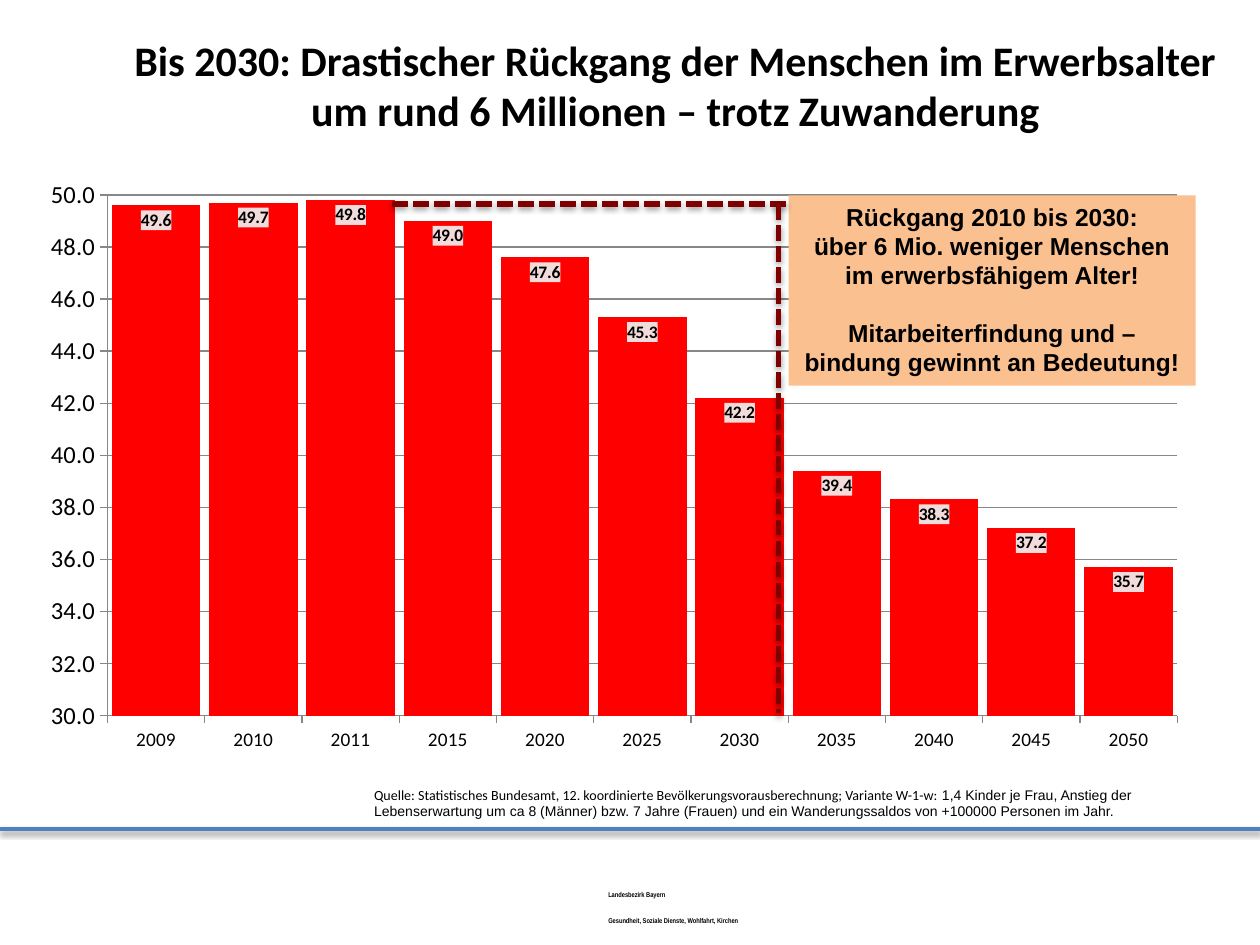
from lxml import etree
from pptx import Presentation
from pptx.chart.data import CategoryChartData
from pptx.dml.color import RGBColor
from pptx.enum.chart import XL_CHART_TYPE, XL_LABEL_POSITION, XL_TICK_MARK
from pptx.enum.dml import MSO_LINE
from pptx.enum.shapes import MSO_CONNECTOR, MSO_SHAPE
from pptx.enum.text import MSO_ANCHOR, PP_ALIGN
from pptx.oxml import parse_xml
from pptx.oxml.ns import nsdecls, qn
from pptx.util import Inches, Pt

COLUMN_CLUSTERED = XL_CHART_TYPE.COLUMN_CLUSTERED
INSIDE_END = XL_LABEL_POSITION.INSIDE_END
TICK_OUTSIDE = XL_TICK_MARK.OUTSIDE
DASH = MSO_LINE.SQUARE_DOT
STRAIGHT = MSO_CONNECTOR.STRAIGHT
RECTANGLE = MSO_SHAPE.RECTANGLE
MIDDLE, TOP = MSO_ANCHOR.MIDDLE, MSO_ANCHOR.TOP
CENTER, LEFT = PP_ALIGN.CENTER, PP_ALIGN.LEFT

WIDTH, HEIGHT = Inches(10), Inches(7.5)
COLUMN, ROW = WIDTH / 100, HEIGHT / 100
COLORS = {
    "text": "000000",
    "bar": "FF0000",
    "label": "F2DCDB",
    "grid": "878787",
    "callout": "FAC090",
    "decline": "800000",
    "rule": "4F81BD",
}
WORKFORCE = {
    "2009": 49.6, "2010": 49.7, "2011": 49.8, "2015": 49.0,
    "2020": 47.6, "2025": 45.3, "2030": 42.2, "2035": 39.4,
    "2040": 38.3, "2045": 37.2, "2050": 35.7,
}
PLOT_LAYOUT = {"x": 0.07, "y": 0.05, "w": 0.91, "h": 0.87}


def color(name):
    return RGBColor.from_string(COLORS[name])


def grid(left, top, width, height):
    return [round(share * unit) for share, unit in
            zip((left, top, width, height), (COLUMN, ROW, COLUMN, ROW))]


def set_font(font, size, name="Calibri", bold=False):
    font.size, font.name, font.bold = Pt(size), name, bold
    font.color.rgb = color("text")


def write_text(shape, paragraphs, size, name="Calibri", bold=False,
               align=LEFT, anchor=TOP, space_after=0, gap_before=()):
    frame = shape.text_frame
    frame.word_wrap = True
    frame.vertical_anchor = anchor
    for index, runs in enumerate(paragraphs):
        paragraph = frame.add_paragraph() if index else frame.paragraphs[0]
        paragraph.alignment = align
        paragraph.space_after = Pt(space_after)
        paragraph.space_before = Pt(size * 1.15 if index in gap_before else 0)
        for text, run_font in runs if isinstance(runs, list) else [(runs, name)]:
            run = paragraph.add_run()
            run.text = text
            set_font(run.font, size, run_font, bold)


def add_text(slide, place, paragraphs, size, **options):
    write_text(slide.shapes.add_textbox(*grid(*place)), paragraphs, size, **options)


def add_line(slide, start, end, name, width, dash=None):
    line = slide.shapes.add_connector(
        STRAIGHT, *grid(*start, *end))
    line.line.color.rgb = color(name)
    line.line.width = Pt(width)
    if dash is not None:
        line.line.dash_style = dash
    line._element.spPr.append(parse_xml(
        f'<a:effectLst {nsdecls("a")}>'
        '<a:outerShdw blurRad="40000" dist="20000" dir="5400000" rotWithShape="0">'
        '<a:srgbClr val="000000"><a:alpha val="38000"/></a:srgbClr>'
        '</a:outerShdw></a:effectLst>'))


def add_callout(slide, place, paragraphs, **options):
    shape = slide.shapes.add_shape(RECTANGLE, *grid(*place))
    shape.shadow.inherit = False
    shape.fill.solid()
    shape.fill.fore_color.rgb = color("callout")
    shape.line.fill.background()
    write_text(shape, paragraphs, **options)


def format_axis(axis, size):
    axis.major_tick_mark = TICK_OUTSIDE
    axis.format.line.color.rgb = color("grid")
    set_font(axis.tick_labels.font, size)


def set_plot_layout(chart):
    plot_area = chart._chartSpace.chart.plotArea
    for old_layout in plot_area.findall(qn("c:layout")):
        plot_area.remove(old_layout)
    layout = etree.Element(qn("c:layout"))
    manual = etree.SubElement(layout, qn("c:manualLayout"))
    settings = {"layoutTarget": "inner", "xMode": "edge", "yMode": "edge", **PLOT_LAYOUT}
    for tag, value in settings.items():
        etree.SubElement(manual, qn(f"c:{tag}")).set("val", str(value))
    plot_area.insert(0, layout)


def format_labels(plot):
    plot.has_data_labels = True
    labels = plot.data_labels
    labels.show_value = True
    labels.number_format, labels.number_format_is_linked = "0.0", False
    labels.position = INSIDE_END
    set_font(labels.font, 10, bold=True)
    labels._element.find(qn("c:txPr")).addprevious(parse_xml(
        f'<c:spPr {nsdecls("c", "a")}><a:solidFill>'
        f'<a:srgbClr val="{COLORS["label"]}"/></a:solidFill></c:spPr>'))


def add_workforce_chart(slide, place):
    data = CategoryChartData(number_format="0.0")
    data.categories = list(WORKFORCE)
    data.add_series("Menschen im Erwerbsalter (Mio.)", list(WORKFORCE.values()))
    chart = slide.shapes.add_chart(COLUMN_CLUSTERED, *grid(*place), data).chart
    chart.has_legend = chart.has_title = False
    set_font(chart.font, 10)
    plot = chart.plots[0]
    plot.gap_width, plot.overlap, plot.vary_by_categories = 10, 100, False
    fill = plot.series[0].format.fill
    fill.solid()
    fill.fore_color.rgb = color("bar")
    format_labels(plot)
    format_axis(chart.category_axis, 11)
    value_axis = chart.value_axis
    format_axis(value_axis, 14)
    value_axis.minimum_scale, value_axis.maximum_scale = 30, 50
    value_axis.major_unit = 2
    value_axis.major_gridlines.format.line.color.rgb = color("grid")
    value_axis.tick_labels.number_format = "0.0"
    value_axis.tick_labels.number_format_is_linked = False
    set_plot_layout(chart)


def main():
    presentation = Presentation()
    presentation.slide_width, presentation.slide_height = WIDTH, HEIGHT
    slide = presentation.slides.add_slide(presentation.slide_layouts[5])

    title = slide.shapes.title
    title.left, title.top, title.width, title.height = grid(7.2, 2.4, 92.8, 13.07)
    write_text(title, ["Bis 2030: Drastischer Rückgang der Menschen im Erwerbsalter "
                       "um rund 6 Millionen – trotz Zuwanderung"],
               24, bold=True, align=CENTER, anchor=MIDDLE)

    add_text(slide, (47.3, 93.6, 20, 6.4),
             ["Landesbezirk Bayern", "Gesundheit, Soziale Dienste, Wohlfahrt, Kirchen"],
             4, name="Arial Narrow", bold=True, space_after=10)
    add_line(slide, (0, 87.73), (100, 87.73), "rule", 2)
    add_workforce_chart(slide, (2, 17.47, 93.3, 63.33))
    add_callout(slide, (62.6, 20.67, 32.3, 20.13),
                ["Rückgang 2010 bis 2030:",
                 "über 6 Mio. weniger Menschen im erwerbsfähigem Alter!",
                 "Mitarbeiterfindung und –bindung gewinnt an Bedeutung!"],
                size=14, name="Arial", bold=True, align=CENTER, gap_before=(2,))
    add_line(slide, (31.1, 21.6), (62.6, 21.6), "decline", 3, DASH)
    add_line(slide, (61.8, 21.6), (61.8, 75.47), "decline", 3, DASH)
    add_text(slide, (28.7, 82.53, 64.8, 4.93),
             [[("Quelle: Statistisches Bundesamt, 12. koordinierte "
                "Bevölkerungsvorausberechnung; Variante W-1-w: ", "Calibri"),
               ("1,4 Kinder je Frau, Anstieg der Lebenserwartung um ca 8 (Männer) "
                "bzw. 7 Jahre (Frauen) und ein Wanderungssaldos von +100000 Personen "
                "im Jahr.", "Arial")]], 8)

    presentation.save("out.pptx")


if __name__ == "__main__":
    main()
